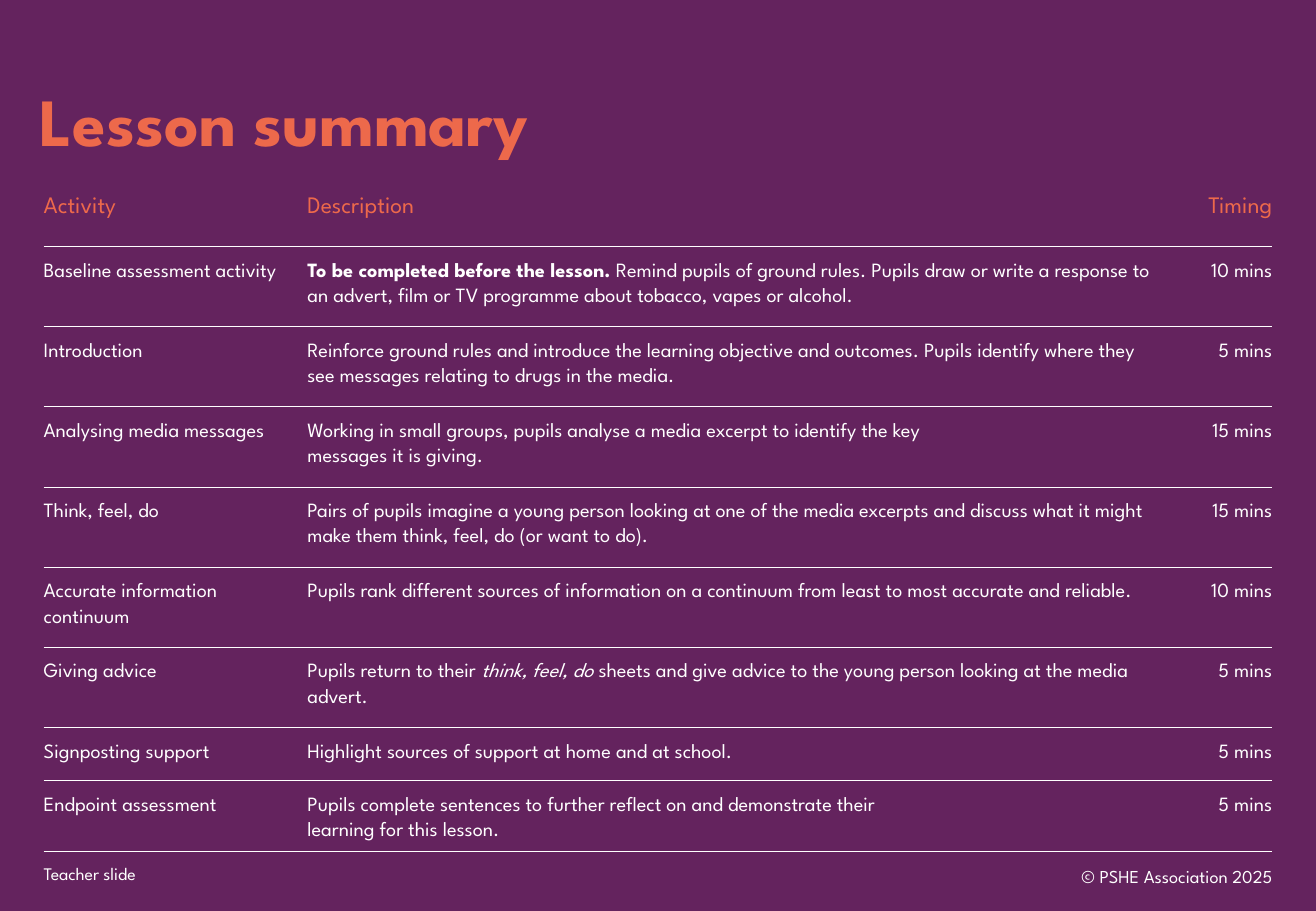
from lxml import etree
from pptx import Presentation
from pptx.dml.color import RGBColor
from pptx.enum.text import MSO_ANCHOR, PP_ALIGN
from pptx.oxml.ns import qn
from pptx.util import Emu, Pt

PX = 9144  # 100 px to the inch
FONT = "League Spartan"
COLORS = {"purple": "64235E", "coral": "ED694B", "white": "FFFFFF"}
LEFT, RIGHT = PP_ALIGN.LEFT, PP_ALIGN.RIGHT
TOP, MIDDLE = MSO_ANCHOR.TOP, MSO_ANCHOR.MIDDLE
INSET = 8
RULE_WIDTH = Pt(0.5)

COLUMNS = (217, 715, 79)
ROWS = (49, *[66] * 6, 44, 58)
HEADINGS = ("Activity", "Description", "Timing")
# A description is a list of (text, style) runs; "\v" in a text breaks the line.
ACTIVITIES = [
    ("Baseline assessment activity",
     [("To be completed before the lesson.", "bold"),
      (" Remind pupils of ground rules. Pupils draw or write a response to an advert, "
       "film or TV programme about tobacco, vapes or alcohol.", "")],
     "10 mins"),
    ("Introduction",
     [("Reinforce ground rules and introduce the learning objective and outcomes. "
       "Pupils identify where they see messages relating to drugs in the media.", "")],
     "5 mins"),
    ("Analysing media messages",
     [("Working in small groups, pupils analyse a media excerpt to identify the key\v"
       "messages it is giving.", "")],
     "15 mins"),
    ("Think, feel, do",
     [("Pairs of pupils imagine a young person looking at one of the media excerpts "
       "and discuss what it might make them think, feel, do (or want to do).", "")],
     "15 mins"),
    ("Accurate information continuum",
     [("Pupils rank different sources of information on a continuum from least to most "
       "accurate and reliable.", "")],
     "10 mins"),
    ("Giving advice",
     [("Pupils return to their ", ""), ("think, feel, do ", "italic"),
      ("sheets and give advice to the young person looking at the media advert.", "")],
     "5 mins"),
    ("Signposting support",
     [("Highlight sources of support at home and at school.", "")],
     "5 mins"),
    ("Endpoint assessment",
     [("Pupils complete sentences to further reflect on and demonstrate their\v"
       "learning for this lesson.", "")],
     "5 mins"),
]


def px(n):
    return Emu(n * PX)


def rgb(name):
    return RGBColor.from_string(COLORS[name])


def write(p, runs, size, color, align=LEFT):
    """Fill a paragraph with (text, style) runs."""
    p.alignment = align
    for text, style in runs:
        for i, line in enumerate(text.split("\v")):
            if i:
                p.add_line_break()
            r = p.add_run()
            r.text = line
            r.font.name = FONT
            r.font.size = Pt(size)
            r.font.color.rgb = rgb(color)
            r.font.bold = style == "bold"
            r.font.italic = style == "italic"


def add_text(slide, box, runs, size, color, align=LEFT, anchor=TOP):
    tf = slide.shapes.add_textbox(*map(px, box)).text_frame
    tf.word_wrap = True
    tf.vertical_anchor = anchor
    write(tf.paragraphs[0], runs, size, color, align)
    return tf


def set_borders(cell, ruled_sides):
    """Rule the given sides in white and clear the others."""
    tc_pr = cell._tc.get_or_add_tcPr()
    for i, side in enumerate("LRTB"):
        ln = etree.Element(qn(f"a:ln{side}"), w=str(RULE_WIDTH))
        if side in ruled_sides:
            fill = etree.SubElement(ln, qn("a:solidFill"))
            etree.SubElement(fill, qn("a:srgbClr"), val=COLORS["white"])
        else:
            etree.SubElement(ln, qn("a:noFill"))
        tc_pr.insert(i, ln)


def add_title(slide, box):
    tf = add_text(slide, box, [("Lesson summary", "bold")], 40, "coral", anchor=MIDDLE)
    tf.paragraphs[0].line_spacing = 0.9


def add_summary_table(slide, left, top):
    table = slide.shapes.add_table(
        len(ROWS), len(COLUMNS),
        *map(px, (left, top, sum(COLUMNS), sum(ROWS)))).table
    table.first_row = table.horz_banding = False
    for column, width in zip(table.columns, COLUMNS):
        column.width = px(width)
    for row, height in zip(table.rows, ROWS):
        row.height = px(height)

    for i, texts in enumerate([HEADINGS, *ACTIVITIES]):
        for j, text in enumerate(texts):
            is_timing = j == len(COLUMNS) - 1
            cell = table.cell(i, j)
            cell.fill.background()
            cell.margin_top = cell.margin_bottom = px(INSET)
            cell.margin_left = px(INSET if is_timing else 0)
            cell.margin_right = px(0 if is_timing else INSET)
            set_borders(cell, "TB" if i else "B")
            p = cell.text_frame.paragraphs[0]
            runs = [(text, "")] if isinstance(text, str) else text
            size, color = (12, "white") if i else (14, "coral")
            write(p, runs, size, color, RIGHT if is_timing else LEFT)
            if i:
                p.line_spacing = Pt(15)


def add_footer(slide, note_box, copyright_box):
    add_text(slide, note_box, [("Teacher slide", "")], 10.5, "white")
    add_text(slide, copyright_box, [("© PSHE Association 2025", "")], 10.8, "white",
             RIGHT, MIDDLE)


def main():
    prs = Presentation()
    prs.slide_width, prs.slide_height = px(1083), px(750)
    slide = prs.slides.add_slide(prs.slide_layouts[6])
    slide.background.fill.solid()
    slide.background.fill.fore_color.rgb = rgb("purple")
    add_title(slide, (23, 65, 820, 76))
    add_summary_table(slide, 36, 154)
    add_footer(slide, (26, 705, 678, 29), (813, 701, 244, 40))
    prs.save("out.pptx")


if __name__ == "__main__":
    main()
